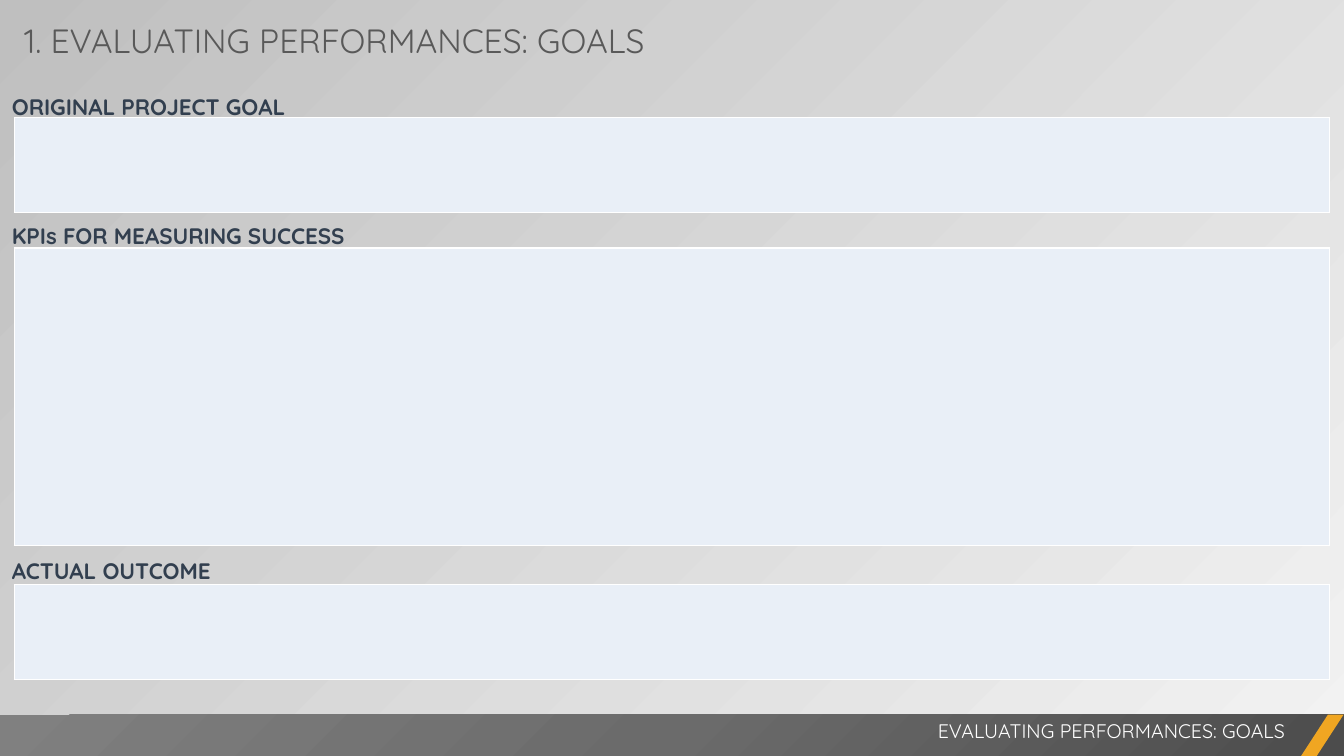
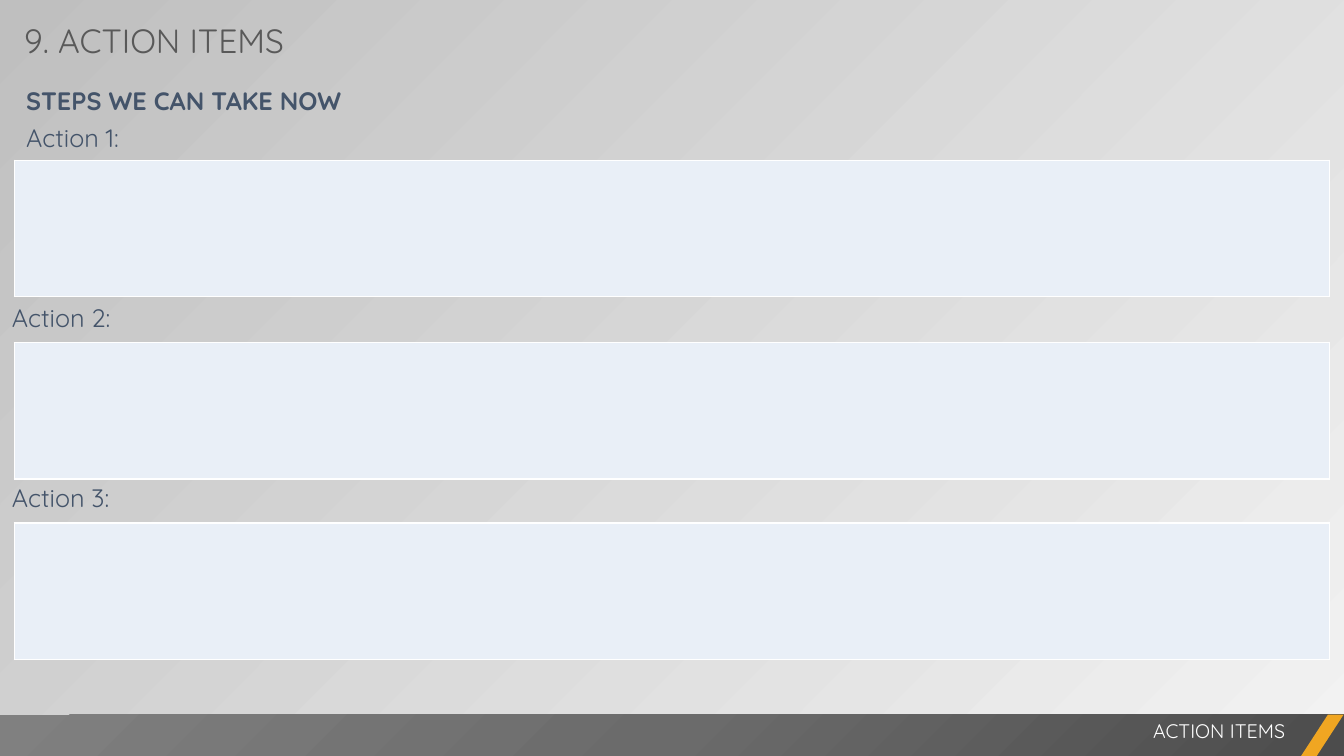
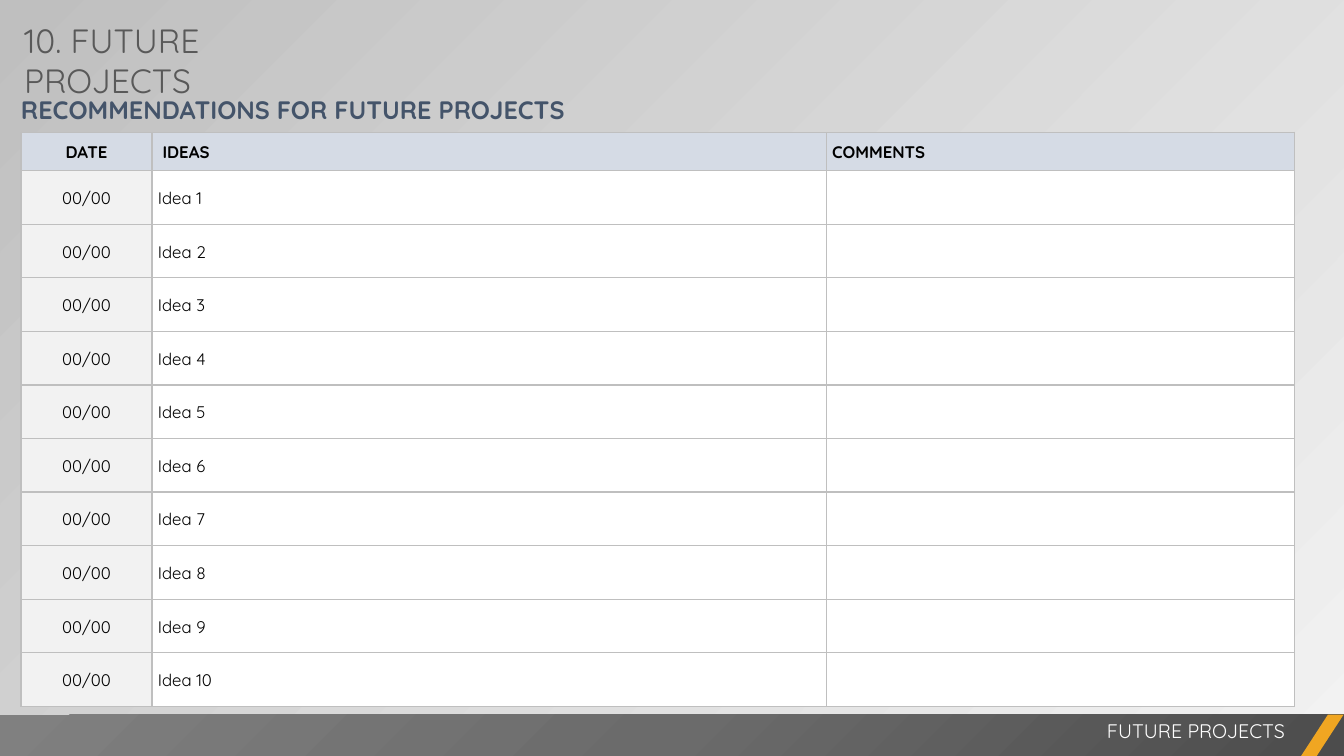
from lxml import etree
from pptx import Presentation
from pptx import util as u
from pptx.dml.color import RGBColor
from pptx.enum import shapes, text
from pptx.oxml import parse_xml
from pptx.oxml.ns import nsdecls, qn

# Content: lengths in cm; labels are (left, top, text), boxes are (top, height)
GOALS = {
    "title": "1. EVALUATING PERFORMANCES: GOALS", "title_width": 17.12,
    "footer": "EVALUATING PERFORMANCES: GOALS",
    "boxes": [(2.97, 2.39), (6.25, 7.49), (14.73, 2.39)],
    "labels": [(0, 1.96, "ORIGINAL PROJECT GOAL"),
               (0, 5.23, "KPIs FOR MEASURING SUCCESS"),
               (0, 13.67, "ACTUAL OUTCOME")],
}
ACTIONS = {
    "title": "9. ACTION ITEMS", "title_width": 7.5,
    "footer": "ACTION ITEMS",
    "heading": (0.36, 2.08, "STEPS WE CAN TAKE NOW"),
    "boxes": [(4.04, 3.43), (8.64, 3.43), (13.18, 3.43)],
    "labels": [(0.36, 3.02, "Action 1:"), (0, 7.55, "Action 2:"),
               (0, 12.09, "Action 3:")],
}
FUTURE = {
    "title": "10. FUTURE PROJECTS", "title_width": 9,
    "footer": "FUTURE PROJECTS",
    "heading": (0.23, 2.08, "RECOMMENDATIONS FOR FUTURE PROJECTS"),
    "header": ["DATE", " IDEAS", "COMMENTS"],
    "rows": [["00/00", f"Idea {n}", ""] for n in range(1, 11)],
}

# Shared look
SLIDE_W, SLIDE_H = 33.87, 19.05
BOX_LEFT, BOX_W = 0.36, 33.15
LABEL_W, LABEL_H = 19.38, 1
BAND_TOP, BAND_H = 18.01, 1.07
ACCENT_LEFT, ACCENT_W = 32.77, 1.09
TABLE_LEFT, TABLE_TOP = 0.53, 3.33
COL_WIDTHS = [3.3, 16.99, 11.81]
HEADER_H, ROW_H = 0.97, 1.35
C = {
    "white": "FFFFFF", "black": "000000", "title": "595959",
    "label": "323F4F", "heading": "44546A", "box": "E9EFF7",
    "header": "D5DBE5", "date": "F2F2F2", "rule": "BFBFBF",
    "accent": "F0A622", "bg_light": "F2F2F2", "bg_dark": "BFBFBF",
}
BAND_STOPS = [(0, "4C4C4C"), (50, "6B6B6B"), (100, "808080")]
STYLES = {
    "title": {"size": u.Pt(24), "color": C["title"]},
    "footer": {"size": u.Pt(14), "color": C["white"]},
    "label": {"size": u.Pt(16), "color": C["label"], "bold": True},
    "action": {"size": u.Pt(18), "color": C["heading"]},
    "heading": {"size": u.Pt(18), "color": C["heading"], "bold": True},
    "cell": {"size": u.Pt(12), "color": C["black"], "bold": False},
    "header": {"size": u.Pt(12), "color": C["black"], "bold": True},
}
LABEL_INSETS = (0.3, 0.15)


def rgb(value):
    return RGBColor.from_string(value)


def write(p, words, style, spacing=None, align=None):
    if spacing:
        p.line_spacing = spacing
    if align:
        p.alignment = align
    r = p.add_run()
    r.text = words
    r.font.name = "Quicksand"
    for key, value in STYLES[style].items():
        if key == "color":
            r.font.color.rgb = rgb(value)
        else:
            setattr(r.font, key, value)


def add_text(s, area, words, style, spacing=None, align=None, insets=None):
    tf = s.shapes.add_textbox(*map(u.Cm, area)).text_frame
    tf.word_wrap = True
    tf.auto_size = text.MSO_AUTO_SIZE.SHAPE_TO_FIT_TEXT
    if insets:
        tf.margin_left = tf.margin_right = u.Cm(insets[0])
        tf.margin_top = tf.margin_bottom = u.Cm(insets[1])
    write(tf.paragraphs[0], words, style, spacing, align)


def add_label(s, label, style, spacing):
    left, top, words = label
    add_text(s, (left, top, LABEL_W, LABEL_H), words, style, spacing,
             insets=LABEL_INSETS)


def add_grid(s, left, top, widths, heights):
    """Add a plain table with the given column widths and row heights."""
    frame = s.shapes.add_table(
        len(heights), len(widths), u.Cm(left), u.Cm(top),
        u.Cm(sum(widths)), u.Cm(sum(heights)))
    table = frame.table
    table.first_row = table.horz_banding = False
    for column, width in zip(table.columns, widths):
        column.width = u.Cm(width)
    for row, height in zip(table.rows, heights):
        row.height = u.Cm(height)
    return table


def format_cell(cell, fill, border):
    cell.fill.solid()
    cell.fill.fore_color.rgb = rgb(fill)
    tc_pr = cell._tc.get_or_add_tcPr()
    for i, side in enumerate(("lnL", "lnR", "lnT", "lnB")):
        tc_pr.insert(i, parse_xml(
            f'<a:{side} {nsdecls("a")} w="12700"><a:solidFill>'
            f'<a:srgbClr val="{border}"/></a:solidFill></a:{side}>'))


def add_box(s, top, height):
    table = add_grid(s, BOX_LEFT, top, [BOX_W], [height])
    format_cell(table.cell(0, 0), C["box"], C["white"])


def add_ideas(s, header, rows):
    heights = [HEADER_H] + [ROW_H] * len(rows)
    table = add_grid(s, TABLE_LEFT, TABLE_TOP, COL_WIDTHS, heights)
    for i, row in enumerate([header] + rows):
        for j, words in enumerate(row):
            cell = table.cell(i, j)
            fill = "header" if i == 0 else "date" if j == 0 else "white"
            format_cell(cell, C[fill], C["rule"])
            cell.vertical_anchor = text.MSO_ANCHOR.MIDDLE
            cell.margin_left = cell.margin_right = u.Cm(0.15)
            cell.margin_top = cell.margin_bottom = 0
            if words:
                write(cell.text_frame.paragraphs[0], words,
                      "cell" if i else "header", 1.07,
                      None if j else text.PP_ALIGN.CENTER)


def set_background(master):
    fill = master.background.fill
    fill.gradient()
    fill.gradient_angle = 135
    for stop, key in zip(fill.gradient_stops, ("bg_light", "bg_dark")):
        stop.color.rgb = rgb(C[key])


def set_band_gradient(sp):
    """Fill a shape with a radial gradient centred on its lower right corner."""
    sp.fill.gradient()
    grad = sp._element.spPr.find(qn("a:gradFill"))
    for child in list(grad):
        grad.remove(child)
    stops = etree.SubElement(grad, qn("a:gsLst"))
    for position, color in BAND_STOPS:
        gs = etree.SubElement(stops, qn("a:gs"), pos=str(position * 1000))
        etree.SubElement(gs, qn("a:srgbClr"), val=color)
    circle = etree.SubElement(grad, qn("a:path"), {"path": "circle"})
    etree.SubElement(circle, qn("a:fillToRect"), l="100000", t="100000")


def add_bar(s, kind, left, width):
    sp = s.shapes.add_shape(kind, *map(u.Cm, (left, BAND_TOP, width, BAND_H)))
    sp.shadow.inherit = False
    sp.line.fill.background()
    return sp


def add_frame(s, content):
    """Add the title, the bottom band, its caption and the accent."""
    set_band_gradient(add_bar(s, shapes.MSO_SHAPE.RECTANGLE, 0, SLIDE_W))
    accent = add_bar(s, shapes.MSO_SHAPE.PARALLELOGRAM, ACCENT_LEFT, ACCENT_W)
    accent.adjustments[0] = 0.65
    accent.fill.solid()
    accent.fill.fore_color.rgb = rgb(C["accent"])
    add_text(s, (13.34, 17.98, 19.3, 0.86), content["footer"], "footer",
             align=text.PP_ALIGN.RIGHT)
    add_text(s, (0.36, 0.38, content["title_width"], 1.27),
             content["title"], "title")


def main():
    prs = Presentation()
    prs.slide_width, prs.slide_height = u.Cm(SLIDE_W), u.Cm(SLIDE_H)
    set_background(prs.slide_master)

    # Label style, label spacing and heading spacing of each slide
    plan = [(GOALS, "label", 1.34, None), (ACTIONS, "action", 0.9, 0.9),
            (FUTURE, None, None, 1.2)]
    for content, style, spacing, heading_spacing in plan:
        s = prs.slides.add_slide(prs.slide_layouts[6])
        for top, height in content.get("boxes", []):
            add_box(s, top, height)
        for label in content.get("labels", []):
            add_label(s, label, style, spacing)
        if "rows" in content:
            add_ideas(s, content["header"], content["rows"])
        if "heading" in content:
            add_label(s, content["heading"], "heading", heading_spacing)
        add_frame(s, content)

    prs.save("out.pptx")


if __name__ == "__main__":
    main()
